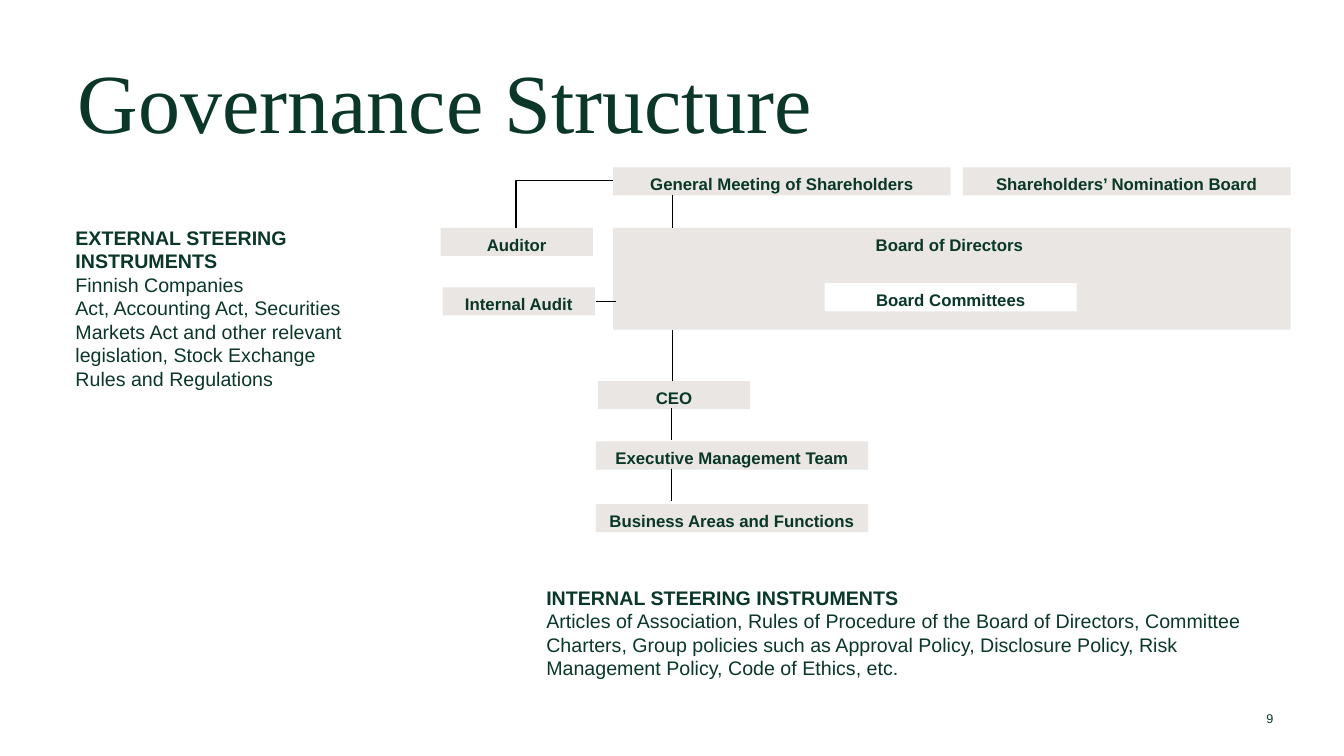
from lxml import etree
from pptx import Presentation
from pptx.dml.color import RGBColor
from pptx.enum.shapes import MSO_CONNECTOR, MSO_SHAPE
from pptx.enum.text import MSO_ANCHOR, MSO_AUTO_SIZE, PP_ALIGN
from pptx.oxml.ns import qn
from pptx.util import Inches, Pt

RECTANGLE = MSO_SHAPE.RECTANGLE
STRAIGHT, ELBOW = MSO_CONNECTOR.STRAIGHT, MSO_CONNECTOR.ELBOW
TOP, MIDDLE = MSO_ANCHOR.TOP, MSO_ANCHOR.MIDDLE
LEFT, CENTER, RIGHT = PP_ALIGN.LEFT, PP_ALIGN.CENTER, PP_ALIGN.RIGHT
GREEN, SAND, WHITE, BLACK = "0A3728", "E9E6E3", "FFFFFF", "000000"


def color(value):
    return RGBColor.from_string(value)


def style(paragraph, size, bold=False, align=LEFT, name="Arial"):
    paragraph.alignment = align
    paragraph.font.name = name
    paragraph.font.size = Pt(size)
    paragraph.font.bold = bold
    paragraph.font.color.rgb = color(GREEN)


presentation = Presentation()
presentation.slide_width = Inches(13.33)
presentation.slide_height = Inches(7.5)
slide = presentation.slides.add_slide(presentation.slide_layouts[5])

# Title
title = slide.shapes.title
title.left, title.top = Inches(0.67), Inches(0.55)
title.width, title.height = Inches(12.27), Inches(1.01)
title.text_frame.text = "Governance Structure"
title.text_frame.auto_size = MSO_AUTO_SIZE.NONE
title.text_frame.vertical_anchor = TOP
title_paragraph = title.text_frame.paragraphs[0]
title_paragraph.line_spacing = 0.9
style(title_paragraph, 60, name="Times New Roman")

# Steering instruments: bold heading, then body paragraphs
instruments = [
    (0.65, 2.19, 3.03, 1.75, [
        "EXTERNAL STEERING INSTRUMENTS",
        "Finnish Companies",
        "Act, Accounting Act, Securities Markets Act and other relevant "
        "legislation, Stock Exchange Rules and Regulations"]),
    (5.32, 5.76, 7.4, 1.04, [
        "INTERNAL STEERING INSTRUMENTS",
        "Articles of Association, Rules of Procedure of the Board of Directors, "
        "Committee Charters, Group policies such as Approval Policy, Disclosure "
        "Policy, Risk Management Policy, Code of Ethics, etc."]),
]
for left, top, width, height, lines in instruments:
    text_box = slide.shapes.add_textbox(
        Inches(left), Inches(top), Inches(width), Inches(height))
    text_frame = text_box.text_frame
    text_frame.word_wrap = True
    text_frame.text = "\n".join(lines)
    for index, paragraph in enumerate(text_frame.paragraphs):
        style(paragraph, 14, bold=index == 0)

# Governance bodies
BAR = 0.28
bodies = [
    ("General Meeting of Shareholders", 6.08, 1.66, 3.35, BAR, SAND),
    ("Shareholders’ Nomination Board", 9.55, 1.66, 3.25, BAR, SAND),
    ("Auditor", 4.37, 2.26, 1.51, BAR, SAND),
    ("Internal Audit", 4.39, 2.85, 1.51, BAR, SAND),
    ("Board of Directors ", 6.08, 2.26, 6.72, 1.01, SAND),
    ("Board Committees", 8.18, 2.81, 2.5, BAR, WHITE),
    ("CEO", 5.93, 3.78, 1.51, BAR, SAND),
    ("Executive Management Team", 5.91, 4.38, 2.7, BAR, SAND),
    ("Business Areas and Functions", 5.91, 5, 2.7, BAR, SAND),
]
for label, left, top, width, height, fill in bodies:
    shape = slide.shapes.add_shape(
        RECTANGLE, Inches(left), Inches(top), Inches(width), Inches(height))
    shape.shadow.inherit = False
    shape.fill.solid()
    shape.fill.fore_color.rgb = color(fill)
    shape.line.fill.background()
    shape.text_frame.text = label
    shape.text_frame.vertical_anchor = TOP
    paragraph = shape.text_frame.paragraphs[0]
    paragraph.line_spacing = 1.08
    paragraph.space_before = Pt(9)
    style(paragraph, 12, bold=True, align=CENTER)

# Reporting lines
reporting_lines = [
    (STRAIGHT, 6.67, 1.93, 6.67, 2.26),
    (STRAIGHT, 6.67, 3.27, 6.67, 3.78),
    (STRAIGHT, 6.66, 4.05, 6.66, 4.37),
    (STRAIGHT, 6.66, 4.65, 6.66, 4.97),
    (ELBOW, 6.08, 1.79, 5.12, 2.26),
    (STRAIGHT, 5.91, 2.99, 6.11, 2.99),
]
for kind, *ends in reporting_lines:
    connector = slide.shapes.add_connector(kind, *[Inches(end) for end in ends])
    connector.line.color.rgb = color(BLACK)
    connector.line.width = Pt(1)
    properties = connector._element.spPr
    etree.SubElement(properties, qn("a:effectLst"))
    if kind == ELBOW:  # a single bend
        properties.find(qn("a:prstGeom")).set("prst", "bentConnector2")

# Page number
page_number = slide.shapes.add_textbox(
    Inches(12.06), Inches(7.01), Inches(0.57), Inches(0.23))
number_frame = page_number.text_frame
number_frame.margin_left = number_frame.margin_right = 0
number_frame.margin_top = number_frame.margin_bottom = 0
number_frame.word_wrap = True
number_frame.vertical_anchor = MIDDLE
number_frame.text = "9"
style(number_frame.paragraphs[0], 9, align=RIGHT)

presentation.save("out.pptx")
